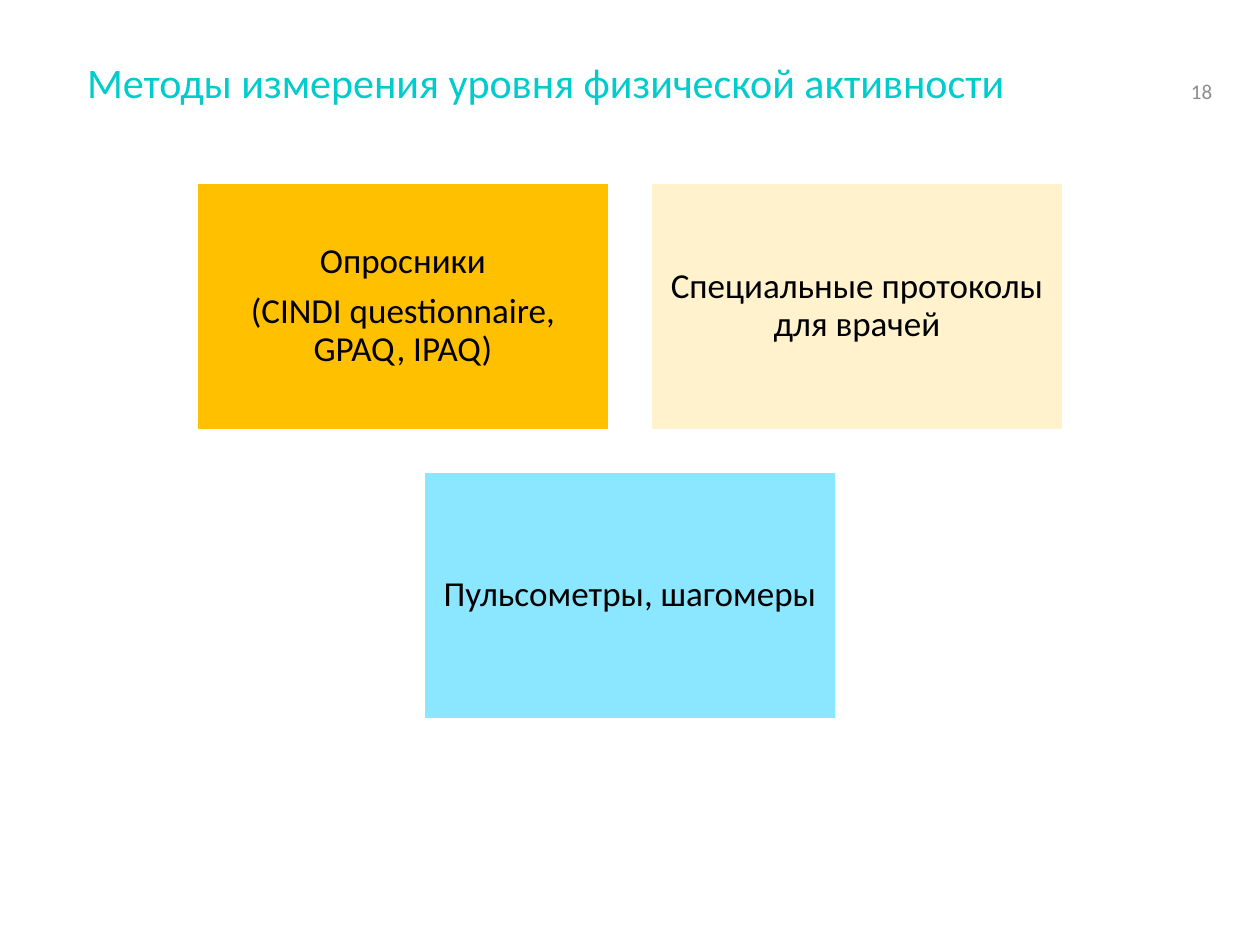
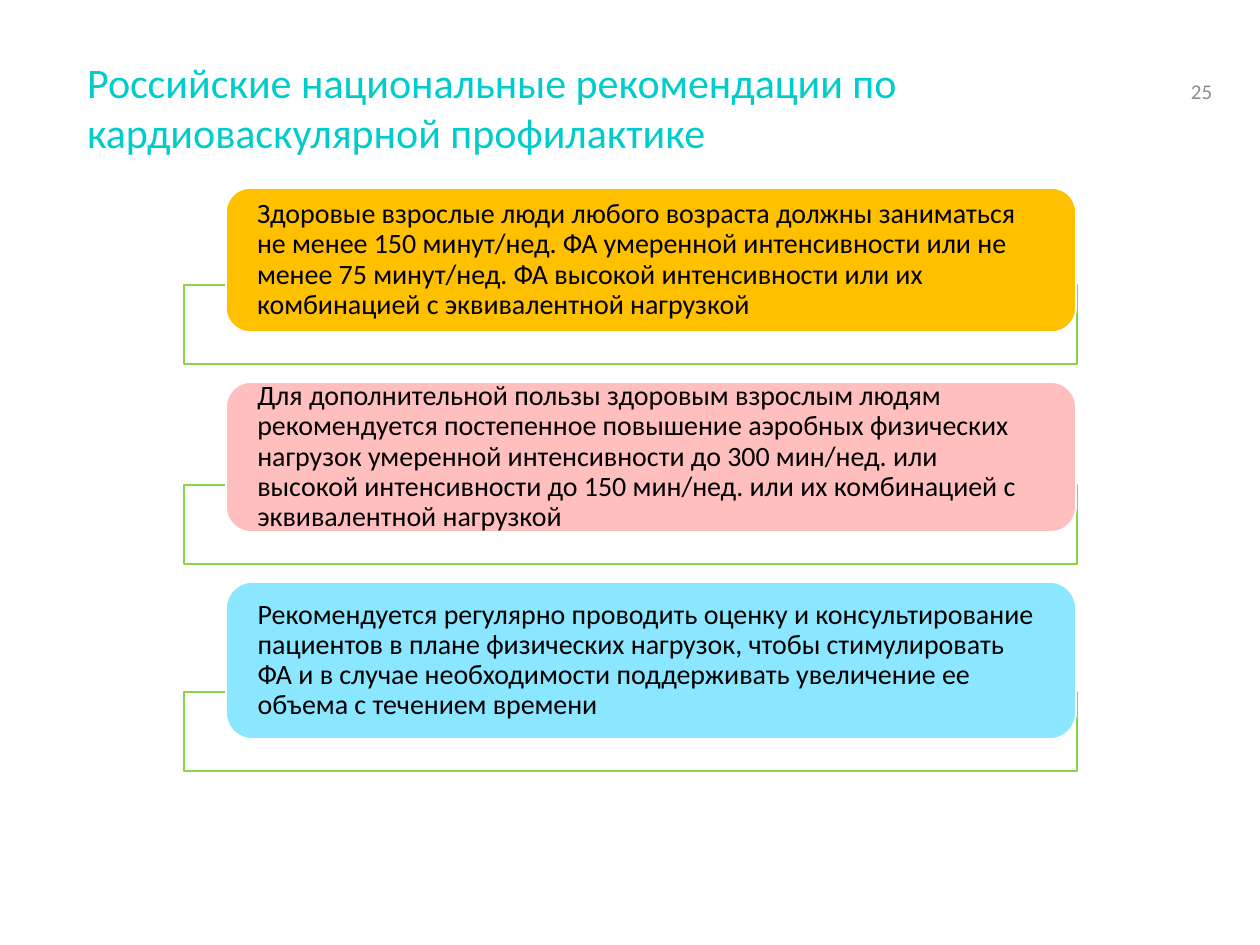
from dataclasses import dataclass

from pptx import Presentation
from pptx import util as u
from pptx.dml.color import RGBColor
from pptx.enum import shapes, text

PX_PER_INCH = 126
SLIDE_W, SLIDE_H = 1260, 945


@dataclass(frozen=True)
class Theme:
    font: str = "Calibri"
    title: str = "00CCCC"
    number: str = "8C8C90"
    ink: str = "000000"
    white: str = "FFFFFF"
    amber: str = "FFC000"
    cream: str = "FFF2CC"
    pink: str = "FFBFBF"
    sky: str = "8BE6FF"
    green: str = "87D447"
    title_size: int = 24
    tile_size: int = 20
    card_size: int = 16
    number_size: int = 12


T = Theme()


def px(n):
    return u.Emu(round(n * 914400 / PX_PER_INCH))


def set_insets(tf, x, y):
    tf.margin_left = tf.margin_right = px(x)
    tf.margin_top = tf.margin_bottom = px(y)


def write(tf, paragraphs, size, color, align=text.PP_ALIGN.LEFT):
    for i, line in enumerate(paragraphs):
        p = tf.paragraphs[0] if i == 0 else tf.add_paragraph()
        p.text = line
        p.alignment = align
        p.font.name = T.font
        p.font.size = u.Pt(size)
        p.font.color.rgb = RGBColor.from_string(color)


def add_box(s, kind, x, y, w, h, fill, line):
    sp = s.shapes.add_shape(kind, px(x), px(y), px(w), px(h))
    sp.shadow.inherit = False
    sp.fill.solid()
    sp.fill.fore_color.rgb = RGBColor.from_string(fill)
    sp.line.color.rgb = RGBColor.from_string(line)
    sp.line.width = u.Pt(1)
    return sp


def fill_text(sp, paragraphs, size, align, inset_x, inset_y):
    """Middle-anchored text with tight lines inside a box."""
    tf = sp.text_frame
    tf.word_wrap = True
    tf.vertical_anchor = text.MSO_ANCHOR.MIDDLE
    set_insets(tf, inset_x, inset_y)
    write(tf, paragraphs, size, T.ink, align)
    for p in tf.paragraphs:
        p.line_spacing = 0.9
        p.space_after = u.Pt(0.35 * size)


def add_slide(prs, title, number):
    s = prs.slides.add_slide(prs.slide_layouts[5])
    # Title
    sp = s.shapes.title
    sp.left, sp.top, sp.width, sp.height = px(87), px(50), px(1086), px(130)
    tf = sp.text_frame
    tf.auto_size = text.MSO_AUTO_SIZE.NONE
    tf.vertical_anchor = text.MSO_ANCHOR.TOP
    set_insets(tf, 0, 6)
    write(tf, [title], T.title_size, T.title)
    # Slide number
    tf = s.shapes.add_textbox(px(1191), px(50), px(48), px(59)).text_frame
    tf.word_wrap = False
    tf.vertical_anchor = text.MSO_ANCHOR.BOTTOM
    set_insets(tf, 0, 5)
    write(tf, [str(number)], T.number_size, T.number)
    return s


def add_tiles(s, rows):
    """Rows of equal tiles, each row centred on the slide."""
    w, h, gap, top = 412, 247, 42, 183
    for i, row in enumerate(rows):
        left = (SLIDE_W - len(row) * (w + gap) + gap) / 2
        for j, (paragraphs, fill) in enumerate(row):
            sp = add_box(s, shapes.MSO_SHAPE.RECTANGLE, left + j * (w + gap),
                         top + i * (h + gap), w, h, fill, T.white)
            fill_text(sp, paragraphs, T.tile_size, text.PP_ALIGN.CENTER, 10, 10)


def add_cards(s, cards):
    """Stacked rounded cards, each overlapping the outlined frame below it."""
    top, frame_h, overlap, gap = 188, 79, 47, 18
    for height, fill, statement in cards:
        frame_top = top + height - overlap
        add_box(s, shapes.MSO_SHAPE.RECTANGLE, 184, frame_top, 893, frame_h,
                T.white, T.green)
        sp = add_box(s, shapes.MSO_SHAPE.ROUNDED_RECTANGLE, 226, top, 850, height,
                     fill, T.white)
        fill_text(sp, [statement], T.card_size, text.PP_ALIGN.LEFT, 24, 0)
        top = frame_top + frame_h + gap


def main():
    prs = Presentation()
    prs.slide_width, prs.slide_height = px(SLIDE_W), px(SLIDE_H)

    # Measurement methods
    s = add_slide(prs, "Методы измерения уровня физической активности", 18)
    add_tiles(s, [
        [(["Опросники", "(CINDI questionnaire, GPAQ, IPAQ)"], T.amber),
         (["Специальные протоколы для врачей"], T.cream)],
        [(["Пульсометры, шагомеры"], T.sky)],
    ])

    # National recommendations
    s = add_slide(prs, "Российские национальные рекомендации по "
                       "кардиоваскулярной профилактике", 25)
    add_cards(s, [
        (144, T.amber,
         "Здоровые взрослые люди любого возраста должны заниматься не менее "
         "150 минут/нед. ФА умеренной интенсивности или не менее 75 минут/нед. "
         "ФА высокой интенсивности или их комбинацией с эквивалентной нагрузкой"),
        (150, T.pink,
         "Для дополнительной пользы здоровым взрослым людям рекомендуется "
         "постепенное повышение аэробных физических нагрузок умеренной "
         "интенсивности до 300 мин/нед. или высокой интенсивности до "
         "150 мин/нед. или их комбинацией с эквивалентной нагрузкой"),
        (157, T.sky,
         "Рекомендуется регулярно проводить оценку и консультирование пациентов "
         "в плане физических нагрузок, чтобы стимулировать ФА и в случае "
         "необходимости поддерживать увеличение ее объема с течением времени"),
    ])

    prs.save("out.pptx")


if __name__ == "__main__":
    main()
